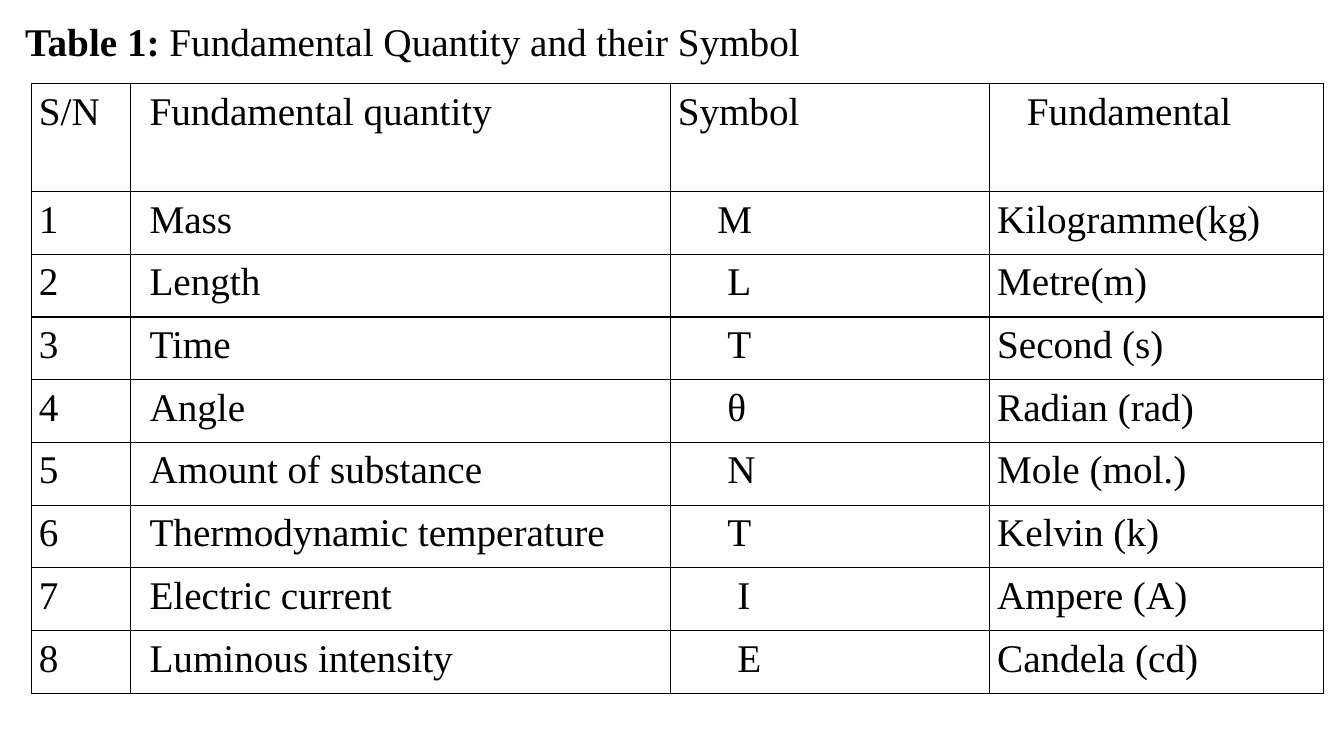
from lxml import etree
from pptx import Presentation, util as u
from pptx.dml.color import RGBColor
from pptx.enum import text
from pptx.oxml.ns import qn

BLACK = "000000"
FONT = {"name": "Times New Roman", "size": u.Pt(28), "bold": False}
COLUMNS = [2.49, 13.61, 8.05, 8.41]
HEADER_HEIGHT, ROW_HEIGHT = 2.72, 1.58
SPACE = 0.25  # width of one indent step, cm
HEADER = ("S/N", "Fundamental quantity", "Symbol", "Fundamental")
HEADER_INDENTS = (0, 0.3, 0, 3 * SPACE)
# quantity, symbol, indent steps of the symbol, unit
QUANTITIES = [
    ("Mass", "M", 4, "Kilogramme(kg)"),
    ("Length", "L", 5, "Metre(m)"),
    ("Time", "T", 5, "Second (s)"),
    ("Angle", "θ", 5, "Radian (rad)"),
    ("Amount of substance", "N", 5, "Mole (mol.)"),
    ("Thermodynamic temperature", "T", 5, "Kelvin (k)"),
    ("Electric current", "I", 6, "Ampere (A)"),
    ("Luminous intensity", "E", 6, "Candela (cd)"),
]


def color(value):
    return RGBColor.from_string(value)


def set_all(target, values):
    for name, value in values.items():
        setattr(target, name, value)


def add_run(p, words, **changes):
    r = p.add_run()
    r.text = words
    set_all(r.font, {**FONT, **changes})
    r.font.color.rgb = color(BLACK)


def add_title(s, left, top, width, height):
    sp = s.shapes.title
    set_all(sp, {"left": u.Cm(left), "top": u.Cm(top),
                 "width": u.Cm(width), "height": u.Cm(height)})
    tf = sp.text_frame
    set_all(tf, {"word_wrap": True, "vertical_anchor": text.MSO_ANCHOR.TOP,
                 "auto_size": text.MSO_AUTO_SIZE.NONE})
    p = tf.paragraphs[0]
    p.alignment = text.PP_ALIGN.JUSTIFY
    add_run(p, "Table 1:", bold=True)
    add_run(p, " Fundamental Quantity and their Symbol")


def add_borders(cell):
    tcPr = cell._tc.get_or_add_tcPr()
    for side in ("a:lnL", "a:lnR", "a:lnT", "a:lnB"):
        ln = etree.SubElement(tcPr, qn(side), w=str(u.Pt(1)))
        fill = etree.SubElement(ln, qn("a:solidFill"))
        etree.SubElement(fill, qn("a:srgbClr"), val=BLACK)


def fill_cell(cell, words, indent):
    set_all(cell, {"margin_left": u.Cm(0.19), "margin_right": u.Cm(0.19),
                   "margin_top": 0, "margin_bottom": 0})
    add_borders(cell)
    cell.fill.background()
    p = cell.text_frame.paragraphs[0]
    set_all(p, {"alignment": text.PP_ALIGN.JUSTIFY, "line_spacing": 1.15})
    p._p.get_or_add_pPr().set("marL", str(u.Cm(indent)))
    add_run(p, words)


def add_quantity_table(s, left, top):
    rows = [(HEADER, HEADER_INDENTS)]
    for number, (quantity, symbol, steps, unit) in enumerate(QUANTITIES, 1):
        rows.append(((str(number), quantity, symbol, unit),
                     (0, 0.3, steps * SPACE, 0)))
    height = HEADER_HEIGHT + ROW_HEIGHT * len(QUANTITIES)
    table = s.shapes.add_table(len(rows), len(COLUMNS), u.Cm(left), u.Cm(top),
                               u.Cm(sum(COLUMNS)), u.Cm(height)).table
    set_all(table, {"first_row": False, "horz_banding": False})
    for column, width in zip(table.columns, COLUMNS):
        column.width = u.Cm(width)
    for i, (words, indents) in enumerate(rows):
        table.rows[i].height = u.Cm(ROW_HEIGHT if i else HEADER_HEIGHT)
        for j, (word, indent) in enumerate(zip(words, indents)):
            fill_cell(table.cell(i, j), word, indent)


def main():
    prs = Presentation()
    set_all(prs, {"slide_width": u.Cm(33.87), "slide_height": u.Cm(19.05)})
    s = prs.slides.add_slide(prs.slide_layouts[5])
    add_title(s, 0.38, 0.3, 32.97, 1.5)
    add_quantity_table(s, 0.79, 2.11)
    prs.save("out.pptx")


if __name__ == "__main__":
    main()
